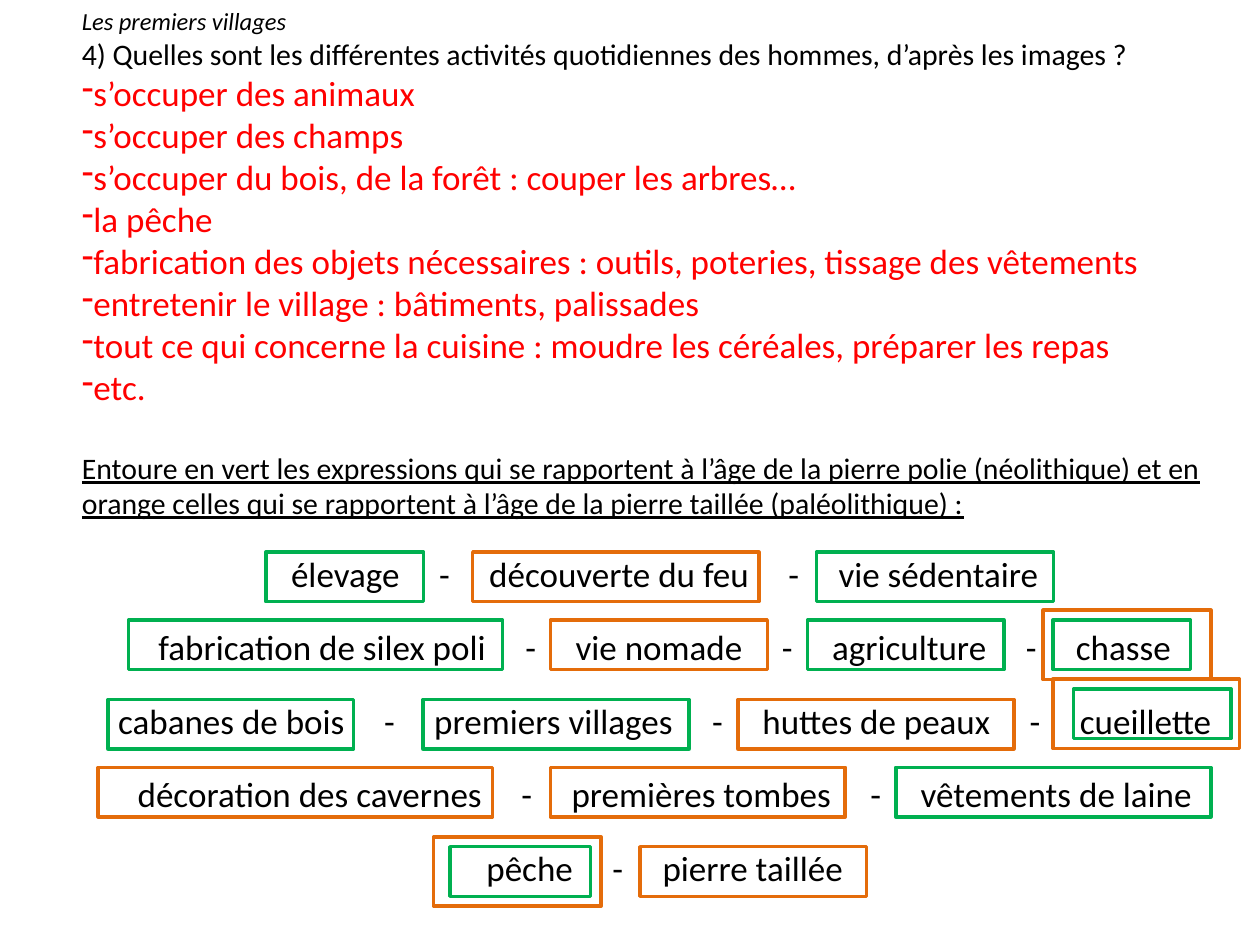
"""Builds a history worksheet slide on the first villages."""
from lxml import etree
from pptx import Presentation
from pptx.dml.color import RGBColor
from pptx.enum.shapes import MSO_SHAPE
from pptx.enum.text import MSO_AUTO_SIZE, PP_ALIGN
from pptx.oxml.ns import qn
from pptx.util import Cm, Pt

RECT = MSO_SHAPE.RECTANGLE
CENTER = PP_ALIGN.CENTER
GROW = MSO_AUTO_SIZE.SHAPE_TO_FIT_TEXT
COLORS = {"black": "000000", "red": "FF0000", "green": "00B050", "orange": "E46C0A"}

TASKS = [
    "s’occuper des animaux",
    "s’occuper des champs",
    "s’occuper du bois, de la forêt : couper les arbres…",
    "la pêche",
    "fabrication des objets nécessaires : outils, poteries, tissage des vêtements",
    "entretenir le village : bâtiments, palissades",
    "tout ce qui concerne la cuisine : moudre les céréales, préparer les repas",
    "etc.",
]
TERMS = [
    ["élevage", "découverte du feu", "vie sédentaire"],
    ["fabrication de silex poli", "vie nomade", "agriculture", "chasse"],
    ["cabanes de bois", "premiers villages", "huttes de peaux", "cueillette"],
    ["décoration des cavernes", "premières tombes", "vêtements de laine"],
    ["pêche", "pierre taillée"],
]
SMALL, TALL = 1, 1.4
BOXES = [
    (11.13, SMALL, [("green", 5.36, 3.18), ("orange", 9.53, 5.77), ("green", 16.46, 4.78)]),
    (12.5, SMALL, [("green", 2.59, 7.54), ("orange", 11.1, 4.37),
                   ("green", 16.28, 3.96), ("green", 21.23, 2.77)]),
    (12.3, TALL, [("orange", 21.03, 3.38)]),
    (14.1, SMALL, [("green", 2.18, 4.95), ("green", 8.53, 5.36), ("orange", 14.88, 5.56)]),
    (13.69, TALL, [("orange", 21.23, 3.76)]),
    (13.89, SMALL, [("green", 21.64, 3.18)]),
    (15.47, SMALL, [("orange", 1.98, 7.95), ("orange", 11.1, 5.94), ("green", 18.06, 6.35)]),
    (16.87, TALL, [("orange", 8.74, 3.38)]),
    (17.07, SMALL, [("green", 9.07, 2.84), ("orange", 12.9, 4.57)]),
]


def write(para, text, size=20, color="black", italic=False, under=False, gap=0):
    """Add a formatted run, with extra letter spacing in points."""
    run = para.add_run()
    run.text = text
    font = run.font
    font.name, font.size = "Calibri", Pt(size)
    font.italic, font.underline = italic, under
    font.color.rgb = RGBColor.from_string(COLORS[color])
    if gap:
        run._r.get_or_add_rPr().set("spc", str(gap * 100))


class Sheet:
    """Holds the slide and its drawing style."""

    def __init__(self, slide, line=2):
        self.shapes = slide.shapes
        self.line = Pt(line)
        self.frame = None

    def body(self, left, top, width, height):
        """Add the text box that takes all paragraphs."""
        box = self.shapes.add_textbox(Cm(left), Cm(top), Cm(width), Cm(height))
        self.frame = box.text_frame
        self.frame.word_wrap = True
        self.frame.auto_size = GROW

    def para(self, before=0):
        """Return the next paragraph of the body."""
        last = self.frame.paragraphs[-1]
        para = self.frame.add_paragraph() if last.runs else last
        para.space_before = Pt(before)
        return para

    def item(self, text):
        """Add a dash item in red."""
        para = self.para()
        props = para._p.get_or_add_pPr()
        etree.SubElement(props, qn("a:buChar")).set("char", "-")
        write(para, text, color="red")

    def row(self, terms):
        """Add a centred row of terms with wide dashes between."""
        para = self.para(18)
        para.alignment = CENTER
        for num, term in enumerate(terms):
            if num:
                write(para, " ", gap=18)
                write(para, "-")
                write(para, " ", gap=18)
            write(para, term)

    def ring(self, color, left, top, width, height):
        """Add an empty frame around a term."""
        box = self.shapes.add_shape(RECT, Cm(left), Cm(top), Cm(width), Cm(height))
        box.shadow.inherit = False
        box.fill.background()
        box.line.color.rgb = RGBColor.from_string(COLORS[color])
        box.line.width = self.line


def main():
    """Build and save the slide."""
    deck = Presentation()
    deck.slide_width, deck.slide_height = Cm(25.4), Cm(19.05)
    sheet = Sheet(deck.slides.add_slide(deck.slide_layouts[6]))
    sheet.body(1.4, 0, 24, 18.21)
    write(sheet.para(), "Les premiers villages", size=14, italic=True)
    write(sheet.para(), "4) Quelles sont les différentes activités quotidiennes "
          "des hommes, d’après les images ?", size=17)
    for task in TASKS:
        sheet.item(task)
    write(sheet.para(24), "Entoure en vert les expressions qui se rapportent à l’âge "
          "de la pierre polie (néolithique) et en orange celles qui se rapportent "
          "à l’âge de la pierre taillée (paléolithique) :", size=17, under=True)
    for terms in TERMS:
        sheet.row(terms)
    for top, height, rings in BOXES:
        for color, left, width in rings:
            sheet.ring(color, left, top, width, height)
    deck.save("out.pptx")


if __name__ == "__main__":
    main()
